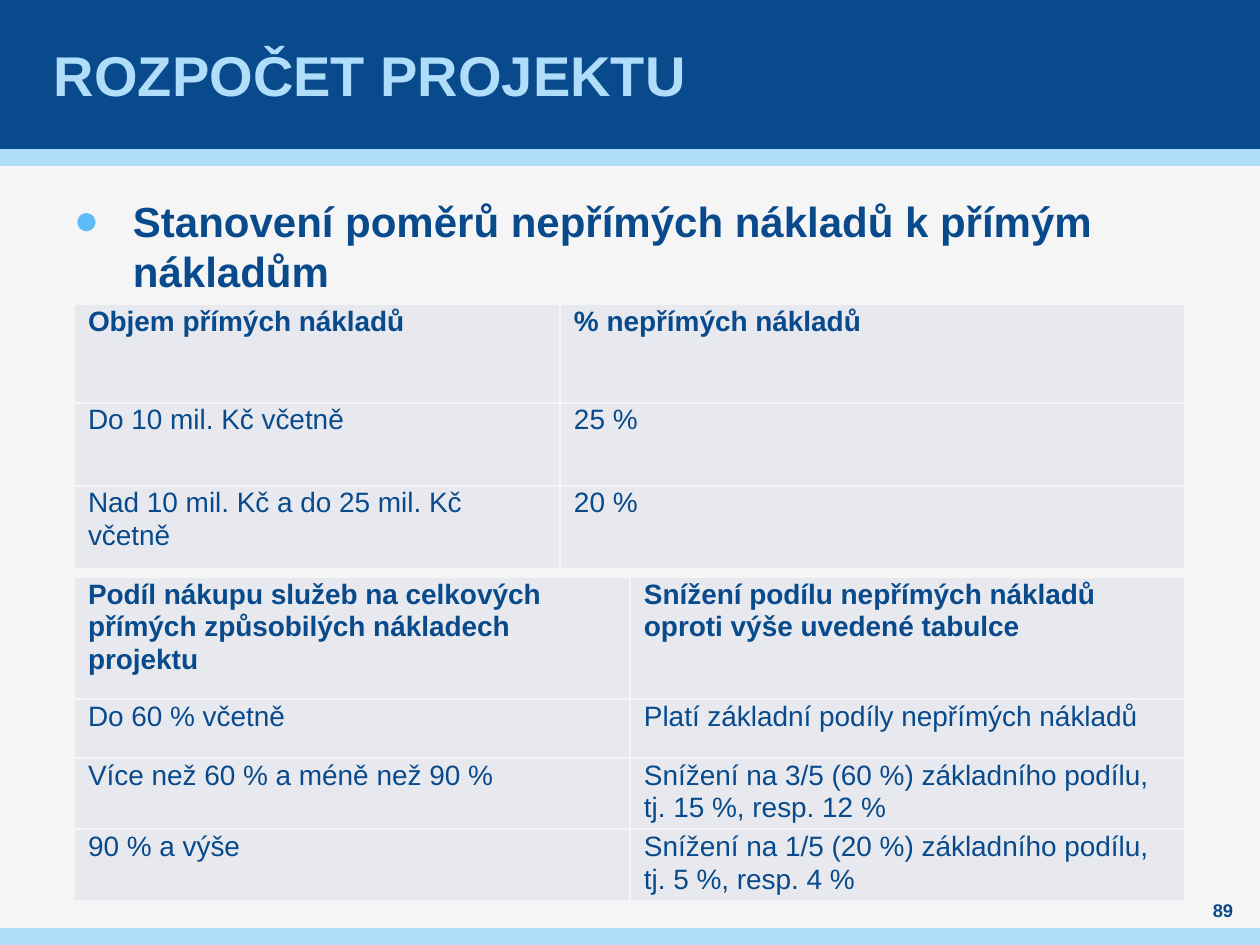
import lxml.etree
import pptx
import pptx.dml.color
import pptx.enum.shapes
import pptx.enum.text
import pptx.oxml.ns
import pptx.util

PX = 914400 / 126
FONT = "Arial"
COLORS = {
    "navy": "084A8B",
    "sky": "AFDDFA",
    "bullet": "5FBBF5",
    "paper": "F5F5F5",
    "cell": "E7E9EE",
}
ALIGN = pptx.enum.text.PP_ALIGN
ANCHOR = pptx.enum.text.MSO_ANCHOR

VOLUME_ROWS = [
    ("Objem přímých nákladů", "% nepřímých nákladů"),
    ("Do 10 mil. Kč včetně", "25 %"),
    ("Nad 10 mil. Kč a do 25 mil. Kč včetně", "20 %"),
]
SERVICE_ROWS = [
    ("Podíl nákupu služeb na celkových přímých způsobilých nákladech projektu",
     "Snížení podílu nepřímých nákladů oproti výše uvedené tabulce"),
    ("Do 60 % včetně", "Platí základní podíly nepřímých nákladů"),
    ("Více než 60 % a méně než 90 %",
     "Snížení na 3/5 (60 %) základního podílu, tj. 15 %, resp. 12 %"),
    ("90 % a výše",
     "Snížení na 1/5 (20 %) základního podílu, tj. 5 %, resp. 4 %"),
]


def emu(px):
    return pptx.util.Emu(round(px * PX))


def rgb(name):
    return pptx.dml.color.RGBColor.from_string(COLORS[name])


def paint(fill, color):
    fill.solid()
    fill.fore_color.rgb = rgb(color)


def add_xml(parent, tag, **attributes):
    return lxml.etree.SubElement(parent, pptx.oxml.ns.qn(tag), attributes)


def write_text(frame, text, size, color="navy", bold=True, align=ALIGN.LEFT,
               line_spacing=None, space=0, margin=0, indent=0):
    """Fill the frame's first paragraph and return that paragraph."""
    frame.word_wrap = True
    para = frame.paragraphs[0]
    para.alignment = align
    para.line_spacing = line_spacing
    para.space_before = para.space_after = pptx.util.Pt(space)
    properties = para._p.get_or_add_pPr()
    properties.set("marL", str(emu(margin)))
    properties.set("indent", str(emu(indent)))
    span = para.add_run()
    span.text = text
    span.font.name = FONT
    span.font.size = pptx.util.Pt(size)
    span.font.bold = bold
    span.font.color.rgb = rgb(color)
    return para


def add_band(page, top, height, color):
    band = page.shapes.add_shape(pptx.enum.shapes.MSO_SHAPE.RECTANGLE,
                                 0, emu(top), emu(1260), emu(height))
    band.shadow.inherit = False
    paint(band.fill, color)
    band.line.fill.background()


def add_text(page, text, left, top, width, height, size,
             anchor=ANCHOR.TOP, inset=0, **text_format):
    box = page.shapes.add_textbox(emu(left), emu(top), emu(width), emu(height))
    frame = box.text_frame
    frame.margin_left = frame.margin_right = emu(inset)
    frame.margin_top = frame.margin_bottom = 0
    frame.vertical_anchor = anchor
    return write_text(frame, text, size, **text_format)


def add_bullet(para, symbol, color):
    properties = para._p.get_or_add_pPr()
    add_xml(add_xml(properties, "a:buClr"), "a:srgbClr", val=COLORS[color])
    add_xml(properties, "a:buFont", typeface=FONT)
    add_xml(properties, "a:buChar", char=symbol)


def style_cell(cell):
    cell.margin_left = cell.margin_right = emu(9)
    cell.margin_top = cell.margin_bottom = 0
    properties = cell._tc.get_or_add_tcPr()
    for side in ("a:lnL", "a:lnR", "a:lnT", "a:lnB"):
        line = add_xml(properties, side, w=str(pptx.util.Pt(1)))
        add_xml(add_xml(line, "a:solidFill"), "a:srgbClr", val=COLORS["paper"])
    paint(cell.fill, "cell")


def add_cost_table(page, top, rows, widths, heights):
    """Add a two-column table whose first row is bold."""
    table = page.shapes.add_table(len(rows), len(widths), emu(74), emu(top),
                                  emu(sum(widths)), emu(sum(heights))).table
    for column, width in zip(table.columns, widths):
        column.width = emu(width)
    for r, (texts, height) in enumerate(zip(rows, heights)):
        table.rows[r].height = emu(height)
        for c, text in enumerate(texts):
            cell = table.cell(r, c)
            style_cell(cell)
            write_text(cell.text_frame, text, 16, bold=r == 0,
                       line_spacing=1.06, space=3, margin=5)


def main():
    deck = pptx.Presentation()
    deck.slide_width, deck.slide_height = emu(1260), emu(945)
    page = deck.slides.add_slide(deck.slide_layouts[6])
    paint(page.background.fill, "paper")

    add_band(page, 149, 17, "sky")
    add_band(page, 0, 149, "navy")
    add_band(page, 928, 17, "sky")

    add_text(page, "ROZPOČET PROJEKTU", 49, 0, 1160, 149, 32,
             anchor=ANCHOR.MIDDLE, inset=5, color="sky")
    heading = add_text(
        page, "Stanovení poměrů nepřímých nákladů k přímým nákladům",
        74, 195, 1111, 649, 24, line_spacing=pptx.util.Pt(28.8), space=6,
        margin=59, indent=-59)
    add_bullet(heading, "●", "bullet")
    add_text(page, "89", 1191, 898, 64, 25, 10.5,
             anchor=ANCHOR.MIDDLE, align=ALIGN.CENTER)

    add_cost_table(page, 304, VOLUME_ROWS, [486, 625], [99, 83, 83])
    add_cost_table(page, 577, SERVICE_ROWS, [556, 555], [122, 59, 59, 59])
    deck.save("out.pptx")


if __name__ == "__main__":
    main()
